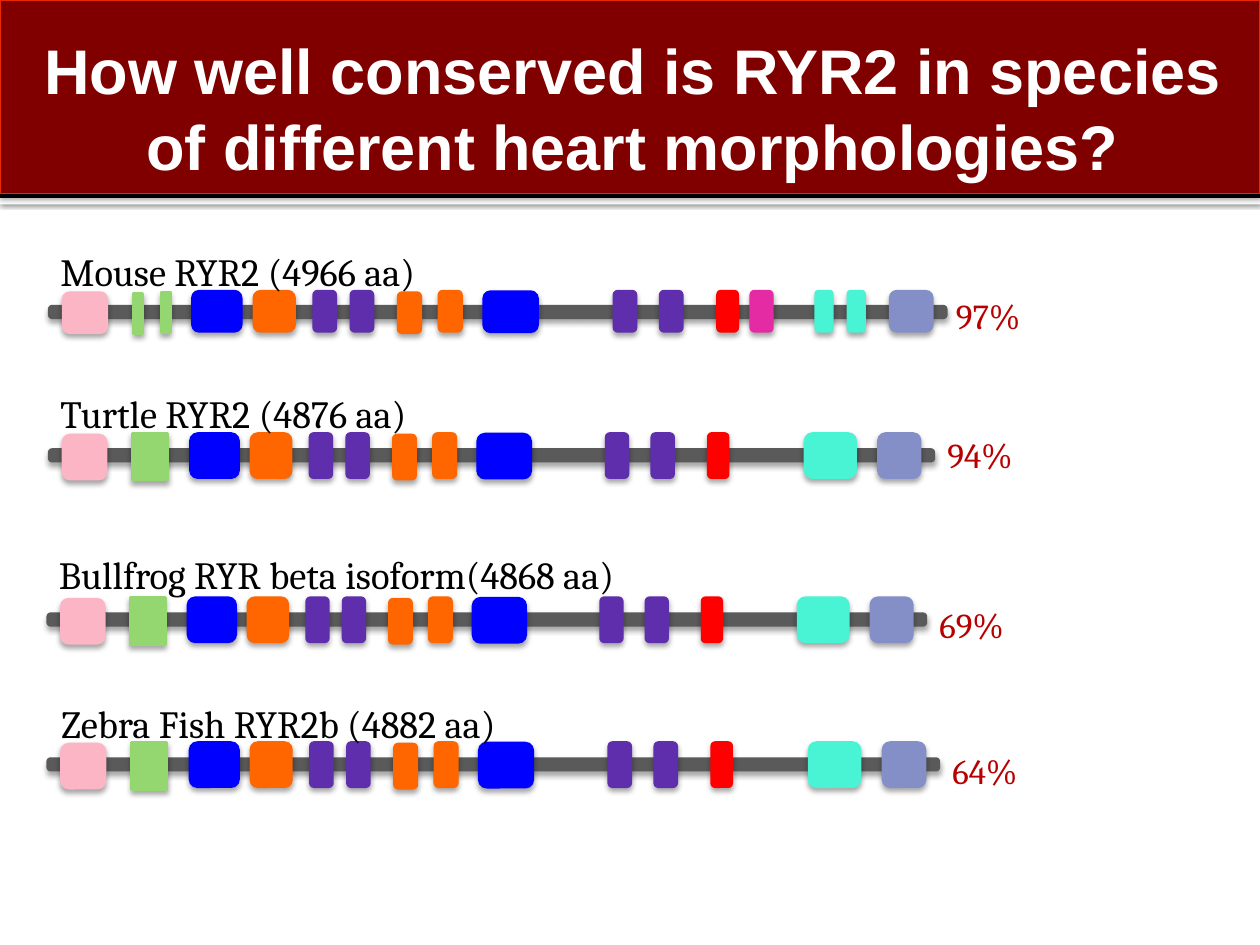
import dataclasses

import lxml.etree
import pptx
import pptx.dml.color
import pptx.enum.shapes
import pptx.enum.text
import pptx.oxml.ns
import pptx.util

Cm = pptx.util.Cm
Pt = pptx.util.Pt
Shape = pptx.enum.shapes.MSO_SHAPE
Align = pptx.enum.text.PP_ALIGN
Anchor = pptx.enum.text.MSO_ANCHOR


@dataclasses.dataclass(frozen=True)
class Theme:
    white: str = "FFFFFF"
    black: str = "000000"
    maroon: str = "800000"
    banner_edge: str = "EA2603"
    percent: str = "B70000"
    backbone: str = "5A5A5A"
    red: str = "FF0000"
    blue: str = "0000FF"
    teal: str = "48F4D4"
    pink: str = "FBB5C4"
    slate: str = "858FC7"
    green: str = "94D771"
    orange: str = "FF6600"
    purple: str = "5F2EAD"
    magenta: str = "E42BA3"
    title_font: str = "Arial"
    body_font: str = "Cambria"
    title_size: int = 36
    label_size: int = 22
    percent_size: int = 20


@dataclasses.dataclass(frozen=True)
class Protein:
    label: str
    identity: str
    backbone: tuple      # left, top, width
    label_box: tuple     # left, top, width, height
    identity_box: tuple
    domains: list
    rise: float = 0.35   # domain top above backbone top
    height: float = 0.89


class Page:
    def __init__(self, slide, theme):
        self.slide = slide
        self.theme = theme

    def rgb(self, colour):
        return pptx.dml.color.RGBColor.from_string(colour)

    def shadow(self, shape, opacity, blur, distance):
        effects = shape.element.spPr.find(pptx.oxml.ns.qn("a:effectLst"))
        outer = lxml.etree.SubElement(
            effects, pptx.oxml.ns.qn("a:outerShdw"), blurRad=str(Pt(blur)),
            dist=str(Pt(distance)), dir="5400000", rotWithShape="0")
        colour = lxml.etree.SubElement(
            outer, pptx.oxml.ns.qn("a:srgbClr"), val=self.theme.black)
        lxml.etree.SubElement(
            colour, pptx.oxml.ns.qn("a:alpha"), val=str(opacity * 1000))

    def block(self, box, fill, line=None, line_width=1.5, kind=Shape.RECTANGLE,
              shadow=None, parent=None):
        shapes = (parent or self.slide).shapes
        block = shapes.add_shape(kind, *map(Cm, box))
        block.fill.solid()
        block.fill.fore_color.rgb = self.rgb(fill)
        if line:
            block.line.color.rgb = self.rgb(line)
            block.line.width = Pt(line_width)
        else:
            block.line.fill.background()
        block.shadow.inherit = False
        if shadow:
            self.shadow(block, *shadow)
        return block

    def text(self, box, wording, size, colour, font, bold=False, align=Align.LEFT,
             anchor=Anchor.TOP, insets=(0.25, 0.25, 0.25, 0.25), parent=None):
        shapes = (parent or self.slide).shapes
        frame = shapes.add_textbox(*map(Cm, box)).text_frame
        frame.word_wrap = True
        frame.vertical_anchor = anchor
        (frame.margin_left, frame.margin_top,
         frame.margin_right, frame.margin_bottom) = map(Cm, insets)
        frame.text = wording
        paragraph = frame.paragraphs[0]
        paragraph.alignment = align
        style = paragraph.runs[0].font
        style.name, style.size, style.bold = font, Pt(size), bold
        style.color.rgb = self.rgb(colour)

    def protein(self, protein):
        theme = self.theme
        group = self.slide.shapes.add_group_shape()
        left, top, width = protein.backbone
        scale = width / REFERENCE_WIDTH
        rounded = dict(kind=Shape.ROUNDED_RECTANGLE, shadow=(35, 3, 2), parent=group)
        self.block((left, top, width, 0.18), theme.backbone, theme.backbone, 3, **rounded)
        for colour, start, length, drop, extra in protein.domains:
            box = (left + start * scale, top - protein.rise + drop,
                   length * scale, protein.height + extra)
            domain = self.block(box, colour, colour, **rounded)
            if colour == theme.green:
                domain.adjustments[0] = 0
        self.text(protein.label_box, protein.label, theme.label_size,
                  theme.black, theme.body_font, parent=group)
        self.text(protein.identity_box, protein.identity, theme.percent_size,
                  theme.percent, theme.body_font, parent=group)


THEME = Theme()
REFERENCE_WIDTH = 17.78

# Domains: colour, start along the backbone, length, drop, extra height
SHARED = [
    (THEME.red, 13.26, 0.4, 0, 0),
    (THEME.blue, 8.61, 1.07, 0.01, 0),
    (THEME.pink, 0.25, 0.87, 0.03, 0),
    (THEME.slate, 16.69, 0.84, 0, 0),
    (THEME.blue, 2.82, 0.97, 0, 0),
    (THEME.orange, 4.04, 0.81, 0, 0),
    (THEME.purple, 5.97, 0.44, 0, 0),
    (THEME.purple, 11.2, 0.44, 0, 0),
    (THEME.purple, 12.12, 0.44, 0, 0),
    (THEME.purple, 5.23, 0.44, 0, 0),
    (THEME.orange, 6.91, 0.45, 0.03, 0),
    (THEME.orange, 7.72, 0.45, 0, 0),
]
SINGLE = SHARED + [
    (THEME.teal, 15.21, 1.02, 0, 0),
    (THEME.green, 1.65, 0.71, 0, 0.05),
]
SPLIT = SHARED + [
    (THEME.magenta, 13.92, 0.43, 0, 0),
    (THEME.teal, 15.21, 0.33, 0, 0),
    (THEME.teal, 15.85, 0.33, 0, 0),
    (THEME.green, 1.65, 0.18, 0.05, 0),
    (THEME.green, 2.2, 0.18, 0.02, 0),
]

PROTEINS = [
    Protein("Turtle RYR2 (4876 aa)", "94%", (1.02, 9.09, 17.78),
            (0.97, 7.62, 10.9, 4.17), (18.85, 8.48, 2.11, 1.4), SINGLE),
    Protein("Mouse RYR2 (4966 aa)", "97%", (1.02, 6.2, 18.03),
            (0.97, 4.75, 13.41, 4.45), (19.02, 5.69, 4.09, 1.83), SPLIT,
            rise=0.33, height=0.81),
    Protein("Bullfrog RYR beta isoform(4868 aa)", "69%", (0.99, 12.4, 17.65),
            (0.94, 10.85, 14.58, 2.31), (18.69, 11.91, 5.11, 1.96), SINGLE),
    Protein("Zebra Fish RYR2b (4882 aa)", "64%", (0.99, 15.32, 17.91),
            (0.99, 13.87, 14.76, 3.78), (18.95, 14.86, 4.98, 2.13), SINGLE),
]


def main():
    deck = pptx.Presentation()
    deck.slide_width, deck.slide_height = Cm(25.4), Cm(19.05)
    page = Page(deck.slides.add_slide(deck.slide_layouts[6]), THEME)

    # Title banner
    page.block((0, 3.99, 25.4, 0.13), THEME.white, shadow=(60, 2.5, 0.8))
    page.block((0, 0, 25.4, 3.99), THEME.black)
    page.block((0, 0, 25.4, 3.91), THEME.maroon, THEME.banner_edge, 0.5,
               shadow=(38, 3.1, 2))
    page.text((0, 0.43, 25.4, 3.48),
              "How well conserved is RYR2 in species of different heart morphologies?",
              THEME.title_size, THEME.white, THEME.title_font, bold=True,
              align=Align.CENTER, anchor=Anchor.MIDDLE,
              insets=(0.25, 0.13, 0.13, 0.13))

    # Domain maps, one per species
    for protein in PROTEINS:
        page.protein(protein)

    deck.save("out.pptx")


if __name__ == "__main__":
    main()
